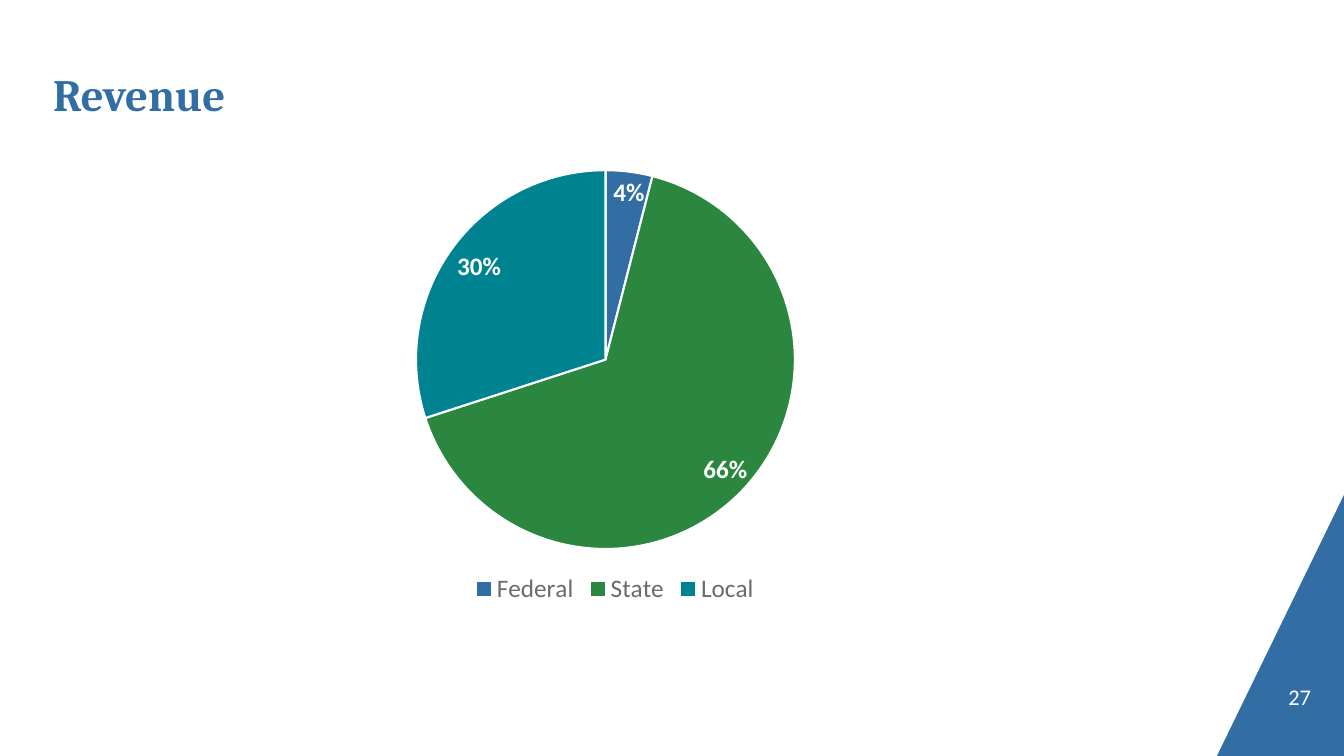
from dataclasses import dataclass

from lxml.etree import SubElement
from pptx import Presentation
from pptx.chart.data import CategoryChartData
from pptx.dml.color import RGBColor
from pptx.enum.chart import XL_CHART_TYPE as ChartType
from pptx.enum.chart import XL_LABEL_POSITION as LabelPosition
from pptx.enum.chart import XL_LEGEND_POSITION as LegendPosition
from pptx.enum.text import MSO_ANCHOR as Anchor
from pptx.enum.text import PP_ALIGN as Align
from pptx.oxml import parse_xml
from pptx.oxml.ns import nsdecls, qn
from pptx.util import Pt

EMU_PER_PX = 914400 / 100.8


@dataclass(frozen=True)
class Theme:
    blue: str = "326EA3"
    green: str = "2B8640"
    teal: str = "008390"
    white: str = "FFFFFF"
    gray: str = "6B6B6B"
    heading: str = "Cambria"
    body: str = "Calibri"
    title_size: int = 32
    chart_size: int = 18
    number_size: int = 16


THEME = Theme()
REVENUE = {
    "Federal": (4, THEME.blue),
    "State": (66, THEME.green),
    "Local": (30, THEME.teal),
}
LABEL_SHIFTS = {"Federal": 0.02, "State": 0.01}


def px(length):
    return round(length * EMU_PER_PX)


def set_all(target, values):
    for name, value in values.items():
        setattr(target, name, value)


def style_font(font, name, size, color, bold=False):
    set_all(font, {"name": name, "size": Pt(size), "bold": bold})
    font.color.rgb = RGBColor.from_string(color)


def fill_solid(target, color):
    target.fill.solid()
    target.fill.fore_color.rgb = RGBColor.from_string(color)


def place(shape, left, top, width, height):
    set_all(shape, {"left": px(left), "top": px(top),
                    "width": px(width), "height": px(height)})


def write_text(shape, text, anchor, align, **font):
    frame = shape.text_frame
    set_all(frame, {"margin_left": 0, "margin_top": 0, "margin_right": 0,
                    "margin_bottom": 0, "word_wrap": True,
                    "vertical_anchor": anchor})
    para = frame.paragraphs[0]
    para.alignment = align
    span = para.add_run()
    span.text = text
    style_font(span.font, **font)


def add_corner(page):
    builder = page.shapes.build_freeform(1344, 495, scale=EMU_PER_PX)
    builder.add_line_segments([(1217, 756), (1344, 756)], close=True)
    corner = builder.convert_to_shape()
    corner.shadow.inherit = False
    fill_solid(corner, THEME.blue)
    corner.line.fill.background()


def add_title(page, text):
    title = page.shapes.title
    place(title, 53, 67, 1106, 54)
    write_text(title, text, Anchor.MIDDLE, Align.LEFT, name=THEME.heading,
               size=THEME.title_size, color=THEME.blue, bold=True)


def add_page_number(page, text):
    box = page.shapes.add_textbox(px(1211), px(680), px(100), px(30))
    write_text(box, text, Anchor.BOTTOM, Align.RIGHT, name=THEME.body,
               size=THEME.number_size, color=THEME.white)


def set_layout(element, before, **values):
    for old in element.findall(qn("c:layout")):
        element.remove(old)
    layout = parse_xml(f"<c:layout {nsdecls('c')}><c:manualLayout/></c:layout>")
    for name, value in values.items():
        SubElement(layout[0], qn(f"c:{name}"), val=str(value))
    element.insert(before, layout)


def style_labels(series, shares):
    labels = series.data_labels
    set_all(labels, {"show_percentage": True, "show_value": False,
                     "number_format": "0%", "number_format_is_linked": False,
                     "position": LabelPosition.INSIDE_END})
    style_font(labels.font, THEME.body, THEME.chart_size, THEME.white, True)
    for index, name in enumerate(shares):
        if name not in LABEL_SHIFTS:
            continue
        label = series.points[index].data_label
        style_font(label.font, THEME.body, THEME.chart_size, THEME.white, True)
        label.position = LabelPosition.INSIDE_END
        element = series.data_labels._element.findall(qn("c:dLbl"))[-1]
        element.find(qn("c:showVal")).set("val", "0")
        element.find(qn("c:showPercent")).set("val", "1")
        set_layout(element, 1, x=LABEL_SHIFTS[name], y=0)


def add_pie(page, shares):
    data = CategoryChartData()
    data.categories = list(shares)
    data.add_series("Series 1", [value for value, color in shares.values()])
    chart = page.shapes.add_chart(ChartType.PIE, px(201), px(121),
                                  px(809), px(492), data).chart
    set_all(chart, {"has_title": False, "has_legend": True})
    style_font(chart.font, THEME.body, THEME.chart_size, THEME.gray)

    plot = chart.plots[0]
    plot.vary_by_categories = True
    series = plot.series[0]
    for index, (value, color) in enumerate(shares.values()):
        slice_format = series.points[index].format
        fill_solid(slice_format, color)
        fill_solid(slice_format.line, THEME.white)
        slice_format.line.width = Pt(1.5)
    style_labels(series, shares)

    legend = chart.legend
    set_all(legend, {"position": LegendPosition.BOTTOM,
                     "include_in_layout": False})
    style_font(legend.font, THEME.body, THEME.chart_size, THEME.gray)
    chart_area = chart.element.find(qn("c:chart"))
    set_layout(chart_area.find(qn("c:legend")), 1,
               xMode="edge", yMode="edge", x=0.33, y=0.91)
    set_layout(chart_area.find(qn("c:plotArea")), 0, layoutTarget="inner",
               xMode="edge", yMode="edge", x=0.26, y=0.1, w=0.48, h=0.77)


def main():
    deck = Presentation()
    set_all(deck, {"slide_width": px(1344), "slide_height": px(756)})
    page = deck.slides.add_slide(deck.slide_layouts[5])
    add_corner(page)
    add_title(page, "Revenue")
    add_page_number(page, "27")
    add_pie(page, REVENUE)
    deck.save("out.pptx")


if __name__ == "__main__":
    main()
